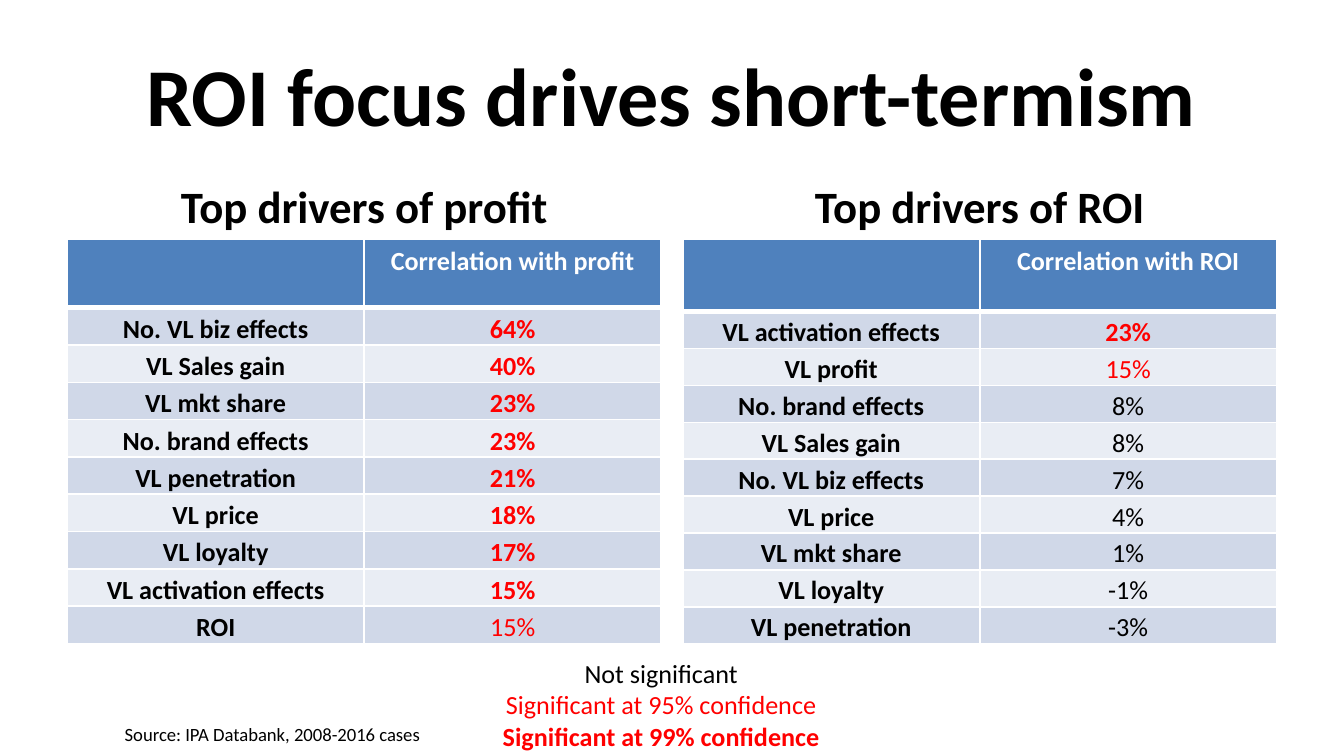
from pptx import Presentation, util as u
from pptx.dml.color import RGBColor
from pptx.enum import text
from pptx.oxml import parse_xml
from pptx.oxml.ns import nsdecls

BLACK = RGBColor(0x00, 0x00, 0x00)
WHITE = RGBColor(0xFF, 0xFF, 0xFF)
RED = RGBColor(0xFF, 0x00, 0x00)
HEADER_BLUE = RGBColor(0x4F, 0x81, 0xBD)
BANDS = RGBColor(0xD0, 0xD8, 0xE8), RGBColor(0xE9, 0xED, 0xF4)
FONT = "Calibri"

# Significance levels: colour and weight
NOT_SIGNIFICANT = BLACK, False
AT_95 = RED, False
AT_99 = RED, True

# Slide grid, in inches, on a 16:9 page
SLIDE_W = 10
SLIDE_H = SLIDE_W * 9 / 16
MARGIN, GUTTER = 0.5, 0.16
COLUMN_W = (SLIDE_W - 2 * MARGIN - GUTTER) / 2
HEADING_TOP, HEADING_H = 1.26, 0.52
TABLE_H = 3.01

PROFIT_DRIVERS = [
    ("No. VL biz effects", "64%", AT_99),
    ("VL Sales gain", "40%", AT_99),
    ("VL mkt share", "23%", AT_99),
    ("No. brand effects", "23%", AT_99),
    ("VL penetration", "21%", AT_99),
    ("VL price", "18%", AT_99),
    ("VL loyalty", "17%", AT_99),
    ("VL activation effects", "15%", AT_99),
    ("ROI", "15%", AT_95),
]
ROI_DRIVERS = [
    ("VL activation effects", "23%", AT_99),
    ("VL profit", "15%", AT_95),
    ("No. brand effects", "8%", NOT_SIGNIFICANT),
    ("VL Sales gain", "8%", NOT_SIGNIFICANT),
    ("No. VL biz effects", "7%", NOT_SIGNIFICANT),
    ("VL price", "4%", NOT_SIGNIFICANT),
    ("VL mkt share", "1%", NOT_SIGNIFICANT),
    ("VL loyalty", "-1%", NOT_SIGNIFICANT),
    ("VL penetration", "-3%", NOT_SIGNIFICANT),
]
LEGEND = [
    ("Not significant", NOT_SIGNIFICANT),
    ("Significant at 95% confidence", AT_95),
    ("Significant at 99% confidence", AT_99),
]


def inches(box):
    return [u.Inches(length) for length in box]


def style(paragraph, size, color=BLACK, bold=False, align=text.PP_ALIGN.CENTER):
    paragraph.alignment = align
    for run in paragraph.runs:
        run.font.name, run.font.size = FONT, u.Pt(size)
        run.font.color.rgb, run.font.bold = color, bold


def fill_placeholder(holder, box, words, size, anchor):
    holder.left, holder.top, holder.width, holder.height = inches(box)
    frame = holder.text_frame
    frame.text = words
    frame.vertical_anchor = anchor
    frame.paragraphs[0].space_before = u.Pt(0)
    style(frame.paragraphs[0], size, bold=True)


def set_borders(cell, bottom=1):
    # Border lines come before the fill in a cell's properties
    properties = cell._tc.get_or_add_tcPr()
    for i, (side, points) in enumerate(zip("LRTB", (1, 1, 1, bottom))):
        properties.insert(i, parse_xml(
            f'<a:ln{side} {nsdecls("a")} w="{u.Pt(points)}">'
            f'<a:solidFill><a:srgbClr val="{WHITE}"/></a:solidFill></a:ln{side}>'))


def fill_cell(cell, words, fill, color, bold):
    cell.fill.solid()
    cell.fill.fore_color.rgb = fill
    if words:
        cell.text_frame.text = words
        style(cell.text_frame.paragraphs[0], 14, color, bold)


def add_drivers_table(slide, box, measure, drivers, header_h):
    table = slide.shapes.add_table(len(drivers) + 1, 2, *inches(box)).table
    for column in table.columns:
        column.width = u.Inches(box[2] / 2)

    # Header row
    table.rows[0].height = u.Inches(header_h)
    for cell, words in zip(table.rows[0].cells, ("", measure)):
        fill_cell(cell, words, HEADER_BLUE, WHITE, True)
        set_borders(cell, bottom=3)

    # One banded row for each driver
    for i, (driver, correlation, level) in enumerate(drivers):
        row = table.rows[i + 1]
        row.height = u.Inches((box[3] - header_h) / len(drivers))
        contents = (driver, BLACK, True), (correlation, *level)
        for cell, (words, color, bold) in zip(row.cells, contents):
            fill_cell(cell, words, BANDS[i % 2], color, bold)
            cell.vertical_anchor = text.MSO_ANCHOR.BOTTOM
            cell.margin_left = cell.margin_right = cell.margin_top = u.Inches(0.01)
            cell.margin_bottom = 0


def add_drivers_column(slide, heading, left, target, drivers, header_h):
    fill_placeholder(heading, (left, HEADING_TOP, COLUMN_W, HEADING_H),
                     f"Top drivers of {target}", 24, text.MSO_ANCHOR.BOTTOM)
    table_box = left, HEADING_TOP + HEADING_H, COLUMN_W, TABLE_H
    add_drivers_table(slide, table_box, f"Correlation with {target}", drivers, header_h)


def add_note(slide, box, lines, size, align):
    frame = slide.shapes.add_textbox(*inches(box)).text_frame
    frame.word_wrap = False
    frame.auto_size = text.MSO_AUTO_SIZE.SHAPE_TO_FIT_TEXT
    frame.text = "\n".join(words for words, _ in lines)
    for paragraph, (_, level) in zip(frame.paragraphs, lines):
        style(paragraph, size, *level, align=align)


def main():
    deck = Presentation()
    deck.slide_width, deck.slide_height = inches((SLIDE_W, SLIDE_H))
    slide = deck.slides.add_slide(deck.slide_layouts.get_by_name("Comparison"))
    title, profit_heading, profit_body, roi_heading, roi_body = slide.placeholders
    for unused in (profit_body, roi_body):
        unused.element.getparent().remove(unused.element)

    # Title
    fill_placeholder(title, (MARGIN, 0.23, SLIDE_W - 2 * MARGIN, 0.94),
                     "ROI focus drives short-termism", 44, text.MSO_ANCHOR.MIDDLE)

    # Two columns of drivers
    add_drivers_column(slide, profit_heading, MARGIN, "profit", PROFIT_DRIVERS, 0.51)
    add_drivers_column(slide, roi_heading, MARGIN + COLUMN_W + GUTTER, "ROI",
                       ROI_DRIVERS, 0.54)

    # Significance legend and source
    add_note(slide, (3.63, 4.84, 2.58, 0.81), LEGEND, 14, text.PP_ALIGN.CENTER)
    source = [("Source: IPA Databank, 2008-2016 cases", NOT_SIGNIFICANT)]
    add_note(slide, (0.83, 5.33, 2.73, 0.27), source, 10, text.PP_ALIGN.LEFT)

    deck.save("out.pptx")


if __name__ == "__main__":
    main()
